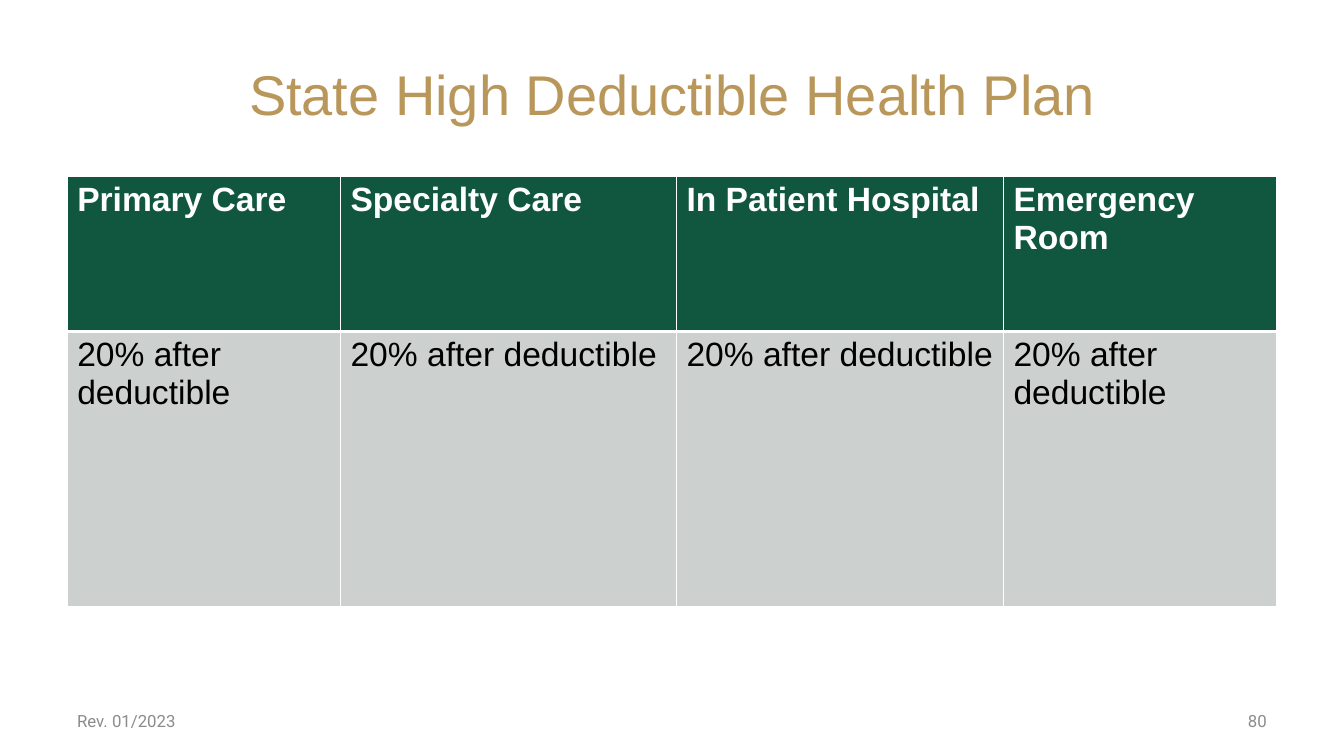
"""Build the High Deductible Health Plan coverage slide."""
import lxml.etree
import pptx
import pptx.dml.color
import pptx.enum.text
import pptx.oxml.ns
import pptx.util

Pt = pptx.util.Pt
ALIGN = pptx.enum.text.PP_ALIGN
MIDDLE = pptx.enum.text.MSO_ANCHOR.MIDDLE
LEFT, WIDTH = 48, 864


def style_font(font, name, size, color, bold=False):
    font.name, font.size, font.bold = name, Pt(size), bold
    font.color.rgb = pptx.dml.color.RGBColor.from_string(color)


def add_border(cell, position, side, width):
    qn = pptx.oxml.ns.qn
    line = lxml.etree.Element(qn(f"a:ln{side}"), w=str(Pt(width)))
    fill = lxml.etree.SubElement(line, qn("a:solidFill"))
    lxml.etree.SubElement(fill, qn("a:srgbClr"), val="FFFFFF")
    cell._tc.get_or_add_tcPr().insert(position, line)


deck = pptx.Presentation()
deck.slide_width, deck.slide_height = Pt(960), Pt(540)
page = deck.slides.add_slide(deck.slide_layouts[5])

title = page.shapes.title
title.left, title.top, title.width, title.height = Pt(LEFT), Pt(21.6), Pt(WIDTH), Pt(90)
title.text_frame.text = "State High Deductible Health Plan"
title.text_frame.vertical_anchor = MIDDLE
title_para = title.text_frame.paragraphs[0]
title_para.alignment = ALIGN.CENTER
style_font(title_para.font, "Arial", 40, "B9975B")

care_types = ["Primary Care", "Specialty Care", "In Patient Hospital", "Emergency Room"]
column_widths = [195.2, 240, 233.6, 195.2]
rows = [
    (110.8, care_types, "115740", "FFFFFF", True, {"L": 1, "R": 1, "T": 1, "B": 3}),
    (196.4, ["20% after deductible"] * 4, "CCD1CF", "000000", False, {"L": 1, "R": 1, "T": 3, "B": 1}),
]
table = page.shapes.add_table(2, 4, Pt(LEFT), Pt(126), Pt(WIDTH), Pt(307.2)).table
for column, width in zip(table.columns, column_widths):
    column.width = Pt(width)
for row, (height, texts, fill, color, bold, borders) in zip(table.rows, rows):
    row.height = Pt(height)
    for cell, text in zip(row.cells, texts):
        cell.text = text
        style_font(cell.text_frame.paragraphs[0].font, "Arial", 24, color, bold)
        cell.fill.solid()
        cell.fill.fore_color.rgb = pptx.dml.color.RGBColor.from_string(fill)
        for position, (side, width) in enumerate(borders.items()):
            add_border(cell, position, side, width)

footer_width = 224
for text, left, alignment in [
    ("80", LEFT + WIDTH - footer_width, ALIGN.RIGHT),
    ("Rev. 01/2023", LEFT, ALIGN.LEFT),
]:
    box = page.shapes.add_textbox(Pt(left), Pt(500.5), Pt(footer_width), Pt(28.8))
    box.text_frame.word_wrap = True
    box.text_frame.vertical_anchor = MIDDLE
    para = box.text_frame.paragraphs[0]
    para.text, para.alignment = text, alignment
    style_font(para.font, "Roboto", 12, "8C8C8C")

deck.save("out.pptx")
